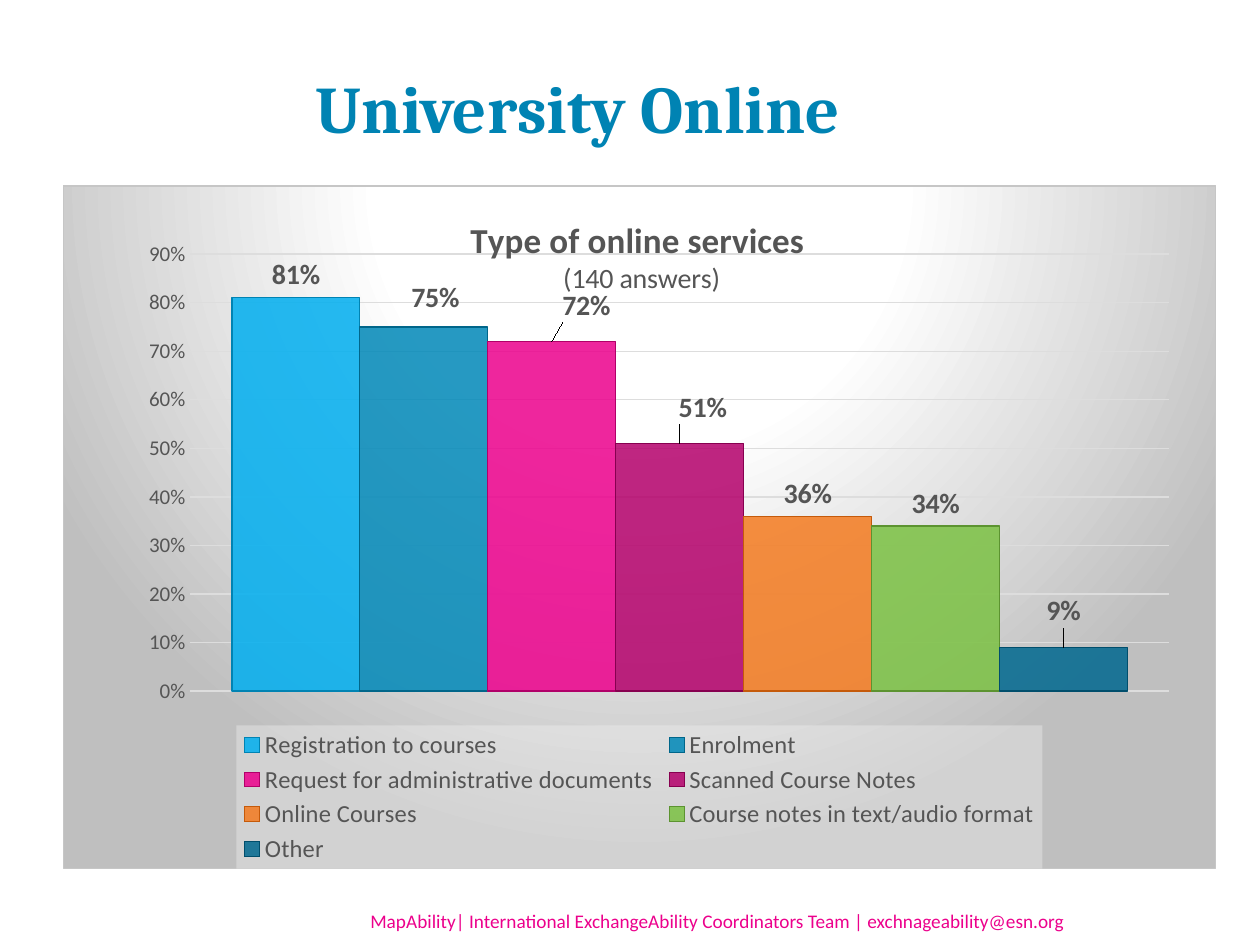
from dataclasses import dataclass

from lxml import etree
from pptx import Presentation
from pptx.chart.data import CategoryChartData
from pptx.dml.color import RGBColor
from pptx.enum.chart import XL_CHART_TYPE, XL_LABEL_POSITION, XL_LEGEND_POSITION, XL_TICK_MARK
from pptx.enum.text import MSO_ANCHOR, PP_ALIGN
from pptx.oxml import parse_xml
from pptx.oxml.ns import nsdecls, qn
from pptx.util import Inches, Pt

COLUMNS = XL_CHART_TYPE.COLUMN_CLUSTERED
ABOVE_BAR = XL_LABEL_POSITION.OUTSIDE_END
BOTTOM = XL_LEGEND_POSITION.BOTTOM
NO_TICK = XL_TICK_MARK.NONE
MIDDLE = MSO_ANCHOR.MIDDLE
LEFT, CENTER = PP_ALIGN.LEFT, PP_ALIGN.CENTER


@dataclass(frozen=True)
class Theme:
    heading_font: str = "Cambria"
    body_font: str = "Calibri"
    heading: str = "0083B3"
    accent: str = "EC008C"
    ink: str = "555555"
    grid: str = "DDDDDD"
    border: str = "C6C6C6"
    legend: str = "F2F2F2"
    heading_size: int = 38
    chart_title_size: int = 20
    label_size: int = 16
    legend_size: int = 14
    axis_size: int = 12
    footer_size: int = 11
    line: float = 0.75


THEME = Theme()

TITLE = "University Online"
CHART_TITLE = "Type of online services "
CHART_SUBTITLE = "(140 answers)"
FOOTER = "MapAbility| International ExchangeAbility Coordinators Team | exchnageability@esn.org"

# name, share, fill, outline, label shift as shares of the chart's size
SERVICES = [
    ("Registration to courses", 0.81, "00AEEF", "0083B3", None),
    ("Enrolment", 0.75, "0088B8", "00668A", (0.01, -0.01)),
    ("Request for administrative documents", 0.72, "EC008C", "B10069", (0.03, -0.02)),
    ("Scanned Course Notes", 0.51, "B4006B", "870050", (0.02, -0.02)),
    ("Online Courses", 0.36, "F47B20", "C55A0A", None),
    ("Course notes in text/audio format", 0.34, "7BC143", "5C9330", None),
    ("Other", 0.09, "00688F", "004E6C", (0, -0.02)),
]
BACKDROP = [(0, "FFFFFF"), (39, "FFFFFF"), (100, "BFBFBF")]

TITLE_AREA = (2.4, 0.22, 7.32, 1.25)
CHART_AREA = (0.5, 1.47, 9.15, 5.43)
FOOTER_AREA = (2.84, 7.23, 6.79, 0.16)


def style(font, size, color=THEME.ink, bold=False, name=THEME.body_font):
    font.size, font.bold, font.name = Pt(size), bold, name
    font.color.rgb = RGBColor.from_string(color)


def write(para, text, align=LEFT, **font_format):
    para.alignment = align
    span = para.add_run()
    span.text = text
    style(span.font, **font_format)


def write_box(frame, text, **font_format):
    frame.word_wrap = True
    frame.vertical_anchor = MIDDLE
    write(frame.paragraphs[0], text, **font_format)


def place(parent, after=None, edge=True, target=None, **shares):
    """Give a chart part a manual layout, behind the child named by after."""
    for old in parent.findall(qn("c:layout")):
        parent.remove(old)
    layout = etree.Element(qn("c:layout"))
    manual = etree.SubElement(layout, qn("c:manualLayout"))
    if target:
        etree.SubElement(manual, qn("c:layoutTarget"), val=target)
    if edge:
        for mode in ("xMode", "yMode"):
            etree.SubElement(manual, qn(f"c:{mode}"), val="edge")
    for key, share in shares.items():
        etree.SubElement(manual, qn(f"c:{key}"), val=str(share))
    if after:
        parent.find(qn(after)).addnext(layout)
    else:
        parent.insert(0, layout)
    return layout


def add_backdrop(chart):
    stops = "".join(f'<a:gs pos="{pos * 1000}"><a:srgbClr val="{color}"/></a:gs>'
                    for pos, color in BACKDROP)
    chart.element.find(qn("c:chart")).addnext(parse_xml(
        f'<c:spPr {nsdecls("c", "a")}><a:gradFill><a:gsLst>{stops}</a:gsLst>'
        '<a:path path="circle"><a:fillToRect l="50000" t="-80000" r="50000" b="180000"/></a:path>'
        f'</a:gradFill><a:ln w="{Pt(THEME.line)}"><a:solidFill>'
        f'<a:srgbClr val="{THEME.border}"/></a:solidFill></a:ln></c:spPr>'))


def add_chart_title(chart):
    frame = chart.chart_title.text_frame
    write(frame.paragraphs[0], CHART_TITLE, align=CENTER, size=THEME.chart_title_size, bold=True)
    write(frame.add_paragraph(), CHART_SUBTITLE, align=CENTER, size=THEME.label_size)
    title = chart.element.find(".//" + qn("c:title"))
    place(title, after="c:tx", x=0.35, y=0.04)
    title.find(qn("c:overlay")).set("val", "1")


def add_legend(chart):
    chart.has_legend = True
    chart.legend.position = BOTTOM
    chart.legend.include_in_layout = False
    style(chart.legend.font, THEME.legend_size)
    legend = chart.element.find(".//" + qn("c:legend"))
    place(legend, after="c:legendPos", x=0.15, y=0.79, w=0.7, h=0.21)
    legend.find(qn("c:overlay")).addnext(parse_xml(
        f'<c:spPr {nsdecls("c", "a")}><a:solidFill><a:srgbClr val="{THEME.legend}">'
        '<a:alpha val="39000"/></a:srgbClr></a:solidFill></c:spPr>'))


def format_axes(chart):
    chart.category_axis.visible = False
    axis = chart.value_axis
    axis.minimum_scale, axis.maximum_scale, axis.major_unit = 0, 0.9, 0.1
    axis.major_tick_mark = axis.minor_tick_mark = NO_TICK
    axis.tick_labels.number_format = "0%"
    axis.tick_labels.number_format_is_linked = False
    style(axis.tick_labels.font, THEME.axis_size)
    axis.format.line.fill.background()
    grid = axis.major_gridlines.format.line
    grid.width = Pt(THEME.line)
    grid.color.rgb = RGBColor.from_string(THEME.grid)


def format_bar(series, fill, outline, shift):
    look = series.format
    look.fill.solid()
    look.fill.fore_color.rgb = RGBColor.from_string(fill)
    etree.SubElement(look.element.find(".//" + qn("a:srgbClr")), qn("a:alpha"), val="85000")
    look.line.width = Pt(THEME.line)
    look.line.color.rgb = RGBColor.from_string(outline)
    labels = series.data_labels
    labels.show_value = True
    labels.number_format, labels.number_format_is_linked = "0%", False
    labels.position = ABOVE_BAR
    style(labels.font, THEME.label_size, bold=True)
    if shift:
        label = series.points[0].data_label
        label.position = ABOVE_BAR
        style(label.font, THEME.label_size, bold=True)
        part = look.element.find(".//" + qn("c:dLbl"))
        layout = place(part, after="c:idx", edge=False, x=shift[0], y=shift[1])
        layout.addnext(parse_xml(
            f'<c:numFmt {nsdecls("c")} formatCode="0%" sourceLinked="0"/>'))


def add_services_chart(page):
    data = CategoryChartData(number_format="0%")
    data.categories = ["1"]
    for name, share, *_ in SERVICES:
        data.add_series(name, [share])
    chart = page.shapes.add_chart(COLUMNS, *map(Inches, CHART_AREA), data).chart
    style(chart.font, 10, "1C1C1C")
    plot = chart.plots[0]
    plot.vary_by_categories = False
    plot.gap_width, plot.overlap = 65, 0
    for series, (_, _, fill, outline, shift) in zip(plot.series, SERVICES):
        format_bar(series, fill, outline, shift)
    format_axes(chart)
    add_chart_title(chart)
    add_legend(chart)
    add_backdrop(chart)
    place(chart.element.find(".//" + qn("c:plotArea")),
          target="inner", x=0.11, y=0.1, w=0.85, h=0.64)


def main():
    deck = Presentation()
    deck.slide_width, deck.slide_height = Inches(10), Inches(7.5)
    page = deck.slides.add_slide(deck.slide_layouts[5])
    title = page.shapes.title
    title.left, title.top, title.width, title.height = map(Inches, TITLE_AREA)
    write_box(title.text_frame, TITLE, size=THEME.heading_size, color=THEME.heading,
              bold=True, name=THEME.heading_font)
    add_services_chart(page)
    footer = page.shapes.add_textbox(*map(Inches, FOOTER_AREA))
    write_box(footer.text_frame, FOOTER, size=THEME.footer_size, color=THEME.accent)
    deck.save("out.pptx")


if __name__ == "__main__":
    main()
